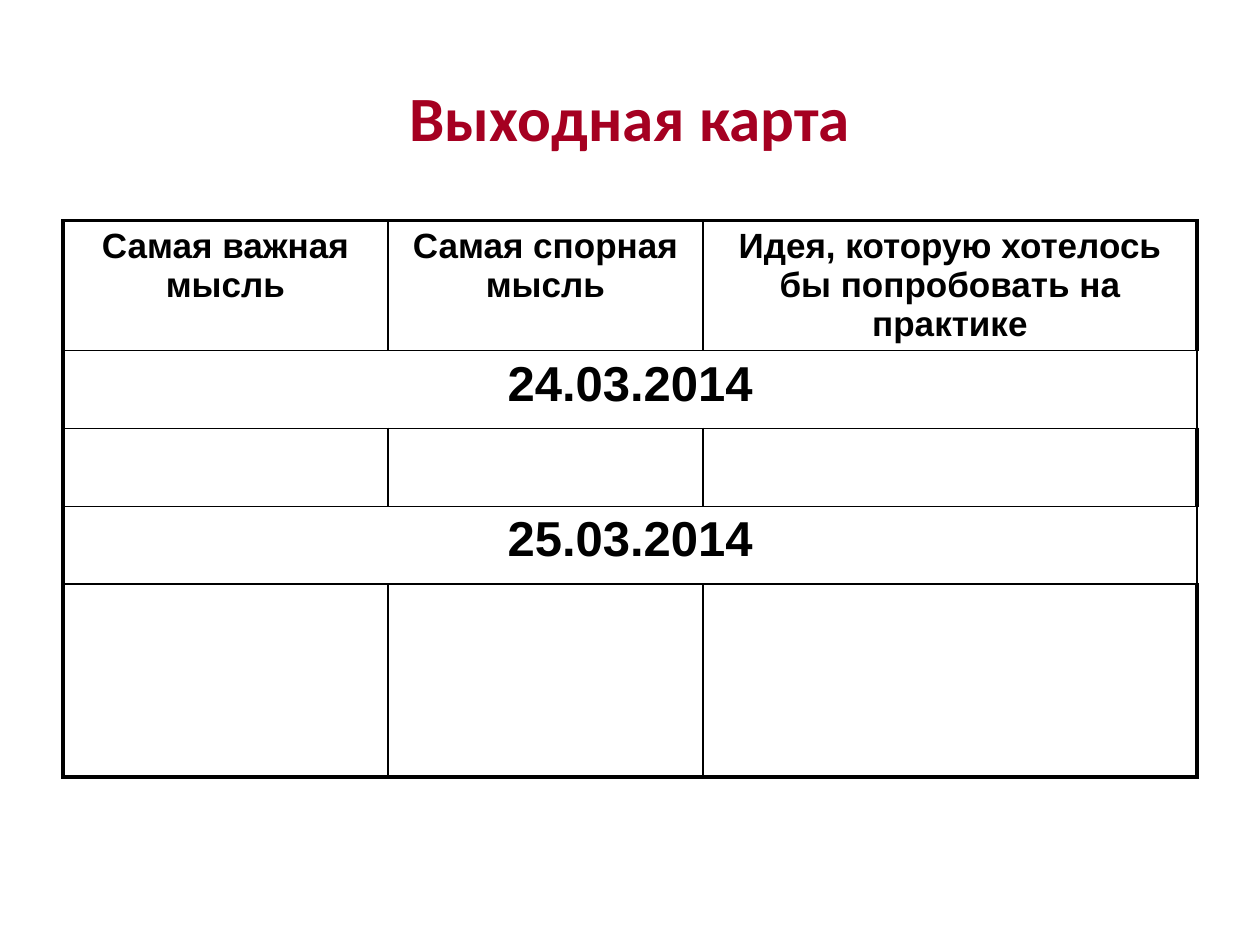
from dataclasses import dataclass

from lxml import etree
from pptx import Presentation, util as u
from pptx.dml.color import RGBColor
from pptx.enum import text
from pptx.oxml.ns import qn

COLORS = {"title": "A50021", "ink": "000000"}
COLUMN_WIDTHS = (6.55, 6.35, 9.96)
ROW_HEIGHTS = (1.5, 1.57, 1.57, 1.57, 3.89)
OUTER_LINE, INNER_LINE = 2.25, 1


@dataclass
class CellText:
    row: int
    column: int
    wording: str
    size: int
    span: int = 1


CELL_TEXTS = (
    CellText(0, 0, "Самая важная мысль", 20),
    CellText(0, 1, "Самая спорная мысль", 20),
    CellText(0, 2, "Идея, которую хотелось бы попробовать на практике", 20),
    CellText(1, 0, "24.03.2014", 28, span=3),
    CellText(3, 0, "25.03.2014", 28, span=3),
)


def format_paragraph(paragraph, font_name: str, size: int, color: str) -> None:
    paragraph.alignment = text.PP_ALIGN.CENTER
    for run in paragraph.runs:
        run.font.name = font_name
        run.font.size = u.Pt(size)
        run.font.bold = True
        run.font.color.rgb = RGBColor.from_string(COLORS[color])


def set_space_before(paragraph, percent: int) -> None:
    paragraph.space_before = u.Pt(0)
    spacing = paragraph._p.pPr.find(qn("a:spcBef"))
    spacing.clear()
    etree.SubElement(spacing, qn("a:spcPct"), val=str(percent * 1000))


def set_borders(cell, widths: dict[str, float]) -> None:
    properties = cell._tc.get_or_add_tcPr()
    for index, (side, width) in enumerate(widths.items()):
        line = etree.Element(qn(f"a:ln{side}"), w=str(u.Pt(width)))
        fill = etree.SubElement(line, qn("a:solidFill"))
        etree.SubElement(fill, qn("a:srgbClr"), val=COLORS["ink"])
        properties.insert(index, line)


def add_title(slide) -> None:
    title = slide.shapes.title
    title.left, title.top = u.Cm(1.27), u.Cm(0.76)
    title.width, title.height = u.Cm(22.86), u.Cm(3.18)
    title.text_frame.text = "Выходная карта"
    title.text_frame.vertical_anchor = text.MSO_ANCHOR.MIDDLE
    format_paragraph(title.text_frame.paragraphs[0], "Calibri", 36, "title")


def add_card_table(slide) -> None:
    last_row, last_column = len(ROW_HEIGHTS) - 1, len(COLUMN_WIDTHS) - 1
    table = slide.shapes.add_table(
        len(ROW_HEIGHTS), len(COLUMN_WIDTHS), u.Cm(1.27), u.Cm(4.45),
        u.Cm(sum(COLUMN_WIDTHS)), u.Cm(sum(ROW_HEIGHTS))).table
    table.first_row = table.horz_banding = False
    for column, width in zip(table.columns, COLUMN_WIDTHS):
        column.width = u.Cm(width)
    for row_index, (row, height) in enumerate(zip(table.rows, ROW_HEIGHTS)):
        row.height = u.Cm(height)
        for column_index, cell in enumerate(row.cells):
            cell.fill.background()
            edges = {"L": column_index == 0, "R": column_index == last_column,
                     "T": row_index == 0, "B": row_index == last_row}
            set_borders(cell, {side: OUTER_LINE if outer else INNER_LINE
                               for side, outer in edges.items()})
    for item in CELL_TEXTS:
        cell = table.cell(item.row, item.column)
        if item.span > 1:
            cell.merge(table.cell(item.row, item.column + item.span - 1))
        cell.text_frame.text = item.wording
        paragraph = cell.text_frame.paragraphs[0]
        format_paragraph(paragraph, "Arial", item.size, "ink")
        set_space_before(paragraph, 20)


def main() -> None:
    presentation = Presentation()
    presentation.slide_width, presentation.slide_height = u.Cm(25.4), u.Cm(19.05)
    slide = presentation.slides.add_slide(presentation.slide_layouts[5])
    add_title(slide)
    add_card_table(slide)
    presentation.save("out.pptx")


if __name__ == "__main__":
    main()
